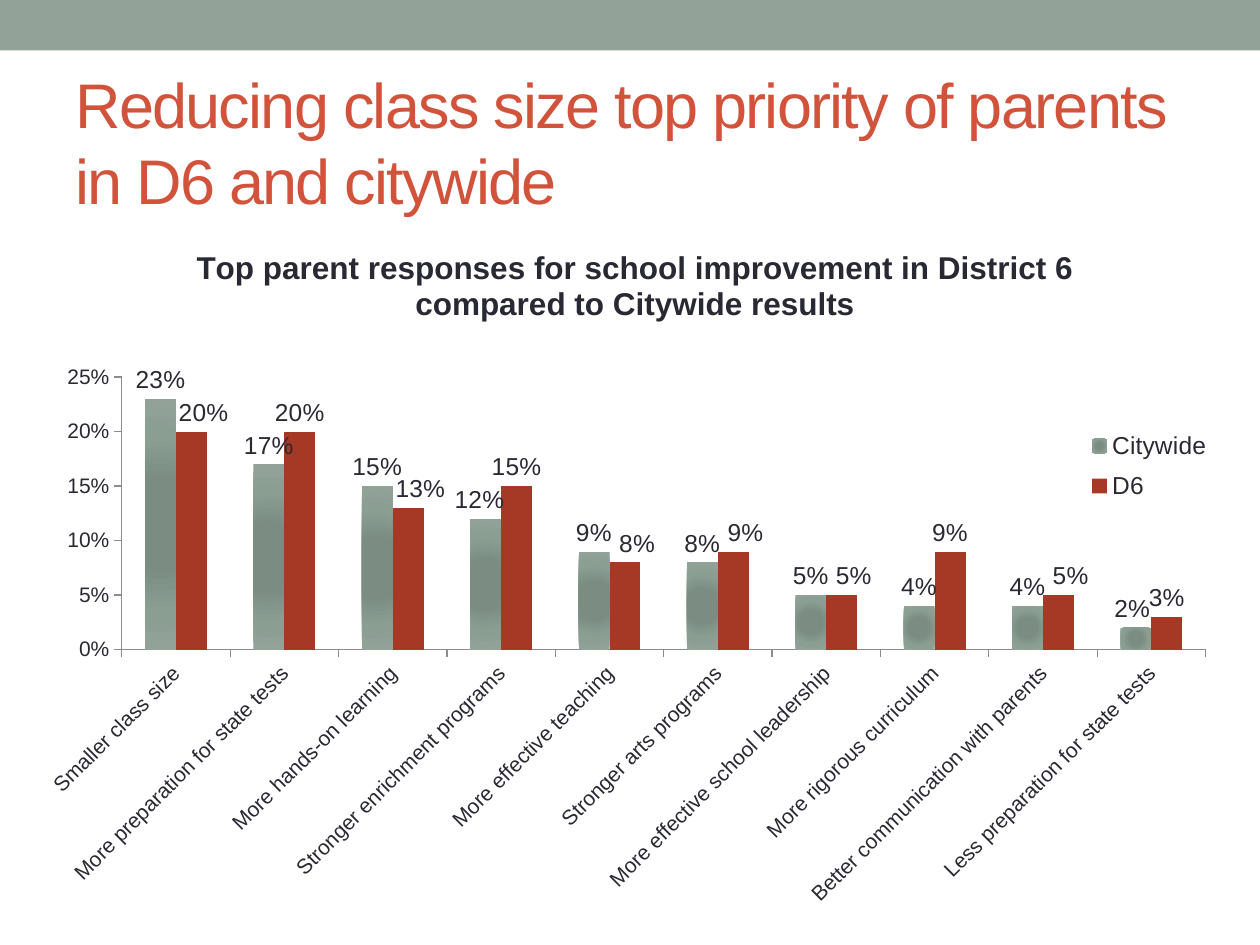
from lxml.etree import SubElement, fromstring
from pptx import Presentation
from pptx.chart.data import CategoryChartData
from pptx.dml.color import RGBColor
from pptx.enum.chart import XL_CHART_TYPE, XL_LABEL_POSITION, XL_LEGEND_POSITION, XL_TICK_MARK
from pptx.enum.shapes import MSO_SHAPE
from pptx.enum.text import MSO_ANCHOR
from pptx.oxml import parse_xml
from pptx.oxml.ns import nsdecls, qn
from pptx.util import Inches, Pt

SAGE = RGBColor(0x93, 0xA2, 0x99)
ORANGE = RGBColor(0xD2, 0x53, 0x3C)
BRICK = RGBColor(0xA5, 0x39, 0x26)
INK = RGBColor(0x29, 0x29, 0x34)
AXIS_GRAY = RGBColor(0x8C, 0x8C, 0x8C)
GRADIENT_STOPS = [
    (0, RGBColor(0x7B, 0x8E, 0x82)),
    (34, RGBColor(0x7B, 0x8D, 0x83)),
    (70, RGBColor(0x8A, 0x9E, 0x92)),
    (100, SAGE),
]
FONT = "Arial"
PERCENT = '0"%"'
WIDTH, HEIGHT = Inches(10), Inches(7.5)

RESPONSES = [
    ("Smaller class size", 23, 20),
    ("More preparation for state tests", 17, 20),
    ("More hands-on learning", 15, 13),
    ("Stronger enrichment programs", 12, 15),
    ("More effective teaching", 9, 8),
    ("Stronger arts programs", 8, 9),
    ("More effective school leadership", 5, 5),
    ("More rigorous curriculum", 4, 9),
    ("Better communication with parents", 4, 5),
    ("Less preparation for state tests", 2, 3),
]
CITYWIDE_LABEL_SHIFTS = {3: -0.005, 9: -0.003}
D6_LABEL_SHIFTS = {0: 0.01, 2: 0.01, 4: 0.01, 5: 0.01, 6: 0.01, 8: 0.01}


def style_font(font, size, color=INK, bold=False):
    font.name = FONT
    font.size = Pt(size)
    font.bold = bold
    font.color.rgb = color


def manual_layout(**settings):
    layout = parse_xml(f"<c:layout {nsdecls('c')}><c:manualLayout/></c:layout>")
    for name, value in settings.items():
        SubElement(layout[0], qn(f"c:{name}")).set("val", str(value))
    return layout


def set_layout(element, layout, following):
    for existing in element.findall(qn("c:layout")):
        element.remove(existing)
    element.find(qn(following)).addprevious(layout)


def add_band(slide, box):
    band = slide.shapes.add_shape(MSO_SHAPE.RECTANGLE, *box)
    band.shadow.inherit = False
    band.fill.solid()
    band.fill.fore_color.rgb = SAGE
    band.line.fill.background()


def add_title(slide, box, text):
    frame = slide.shapes.add_textbox(*box).text_frame
    frame.word_wrap = True
    frame.vertical_anchor = MSO_ANCHOR.MIDDLE
    paragraph = frame.paragraphs[0]
    paragraph.text = text
    style_font(paragraph.font, 36, ORANGE)
    paragraph.runs[0].font._element.set("spc", "-100")


def fill_radial(series):
    series.format.fill.solid()
    stops = "".join(
        f'<a:gs pos="{position * 1000}"><a:srgbClr val="{color}"/></a:gs>'
        for position, color in GRADIENT_STOPS
    )
    gradient = fromstring(
        f'<a:gradFill {nsdecls("a")} rotWithShape="1"><a:gsLst>{stops}</a:gsLst>'
        '<a:path path="circle"><a:fillToRect l="50000" t="50000" r="50000" b="50000"/>'
        "</a:path></a:gradFill>"
    )
    properties = series._element.find(qn("c:spPr"))
    properties.replace(properties.find(qn("a:solidFill")), gradient)


def label_series(series, shifts):
    labels = series.data_labels
    labels.show_value = True
    labels.position = XL_LABEL_POSITION.OUTSIDE_END
    labels.number_format = PERCENT
    labels.number_format_is_linked = False
    style_font(labels.font, 14)
    for index in shifts:
        label = series.points[index].data_label
        style_font(label.font, 14)
        label.position = XL_LABEL_POSITION.OUTSIDE_END
    for element, shift in zip(labels._element.findall(qn("c:dLbl")), shifts.values()):
        element.find(qn("c:idx")).addnext(manual_layout(x=shift, y=0))


def style_axis(axis):
    axis.has_major_gridlines = False
    axis.major_tick_mark = XL_TICK_MARK.OUTSIDE
    axis.minor_tick_mark = XL_TICK_MARK.NONE
    axis.format.line.color.rgb = AXIS_GRAY
    axis.format.line.width = Pt(0.75)
    style_font(axis.tick_labels.font, 12)


def add_response_chart(slide, box, title):
    categories, citywide, district = zip(*RESPONSES)
    data = CategoryChartData(number_format=PERCENT)
    data.categories = categories
    data.add_series("Citywide", citywide)
    data.add_series("D6", district)
    chart = slide.shapes.add_chart(XL_CHART_TYPE.COLUMN_CLUSTERED, *box, data).chart
    style_font(chart.font, 10)

    chart.has_title = True
    chart.chart_title.include_in_layout = False
    paragraph = chart.chart_title.text_frame.paragraphs[0]
    paragraph.text = title
    style_font(paragraph.font, 18, bold=True)

    plot = chart.plots[0]
    plot.gap_width = 150
    plot.overlap = 0
    plot.vary_by_categories = False
    citywide_series, district_series = plot.series
    fill_radial(citywide_series)
    district_series.format.fill.solid()
    district_series.format.fill.fore_color.rgb = BRICK
    label_series(citywide_series, CITYWIDE_LABEL_SHIFTS)
    label_series(district_series, D6_LABEL_SHIFTS)

    for axis in (chart.category_axis, chart.value_axis):
        style_axis(axis)
    chart.category_axis.tick_labels.font._element.getparent().getparent().getparent().find(
        qn("a:bodyPr")
    ).set("rot", "-2700000")
    chart.value_axis.minimum_scale = 0
    chart.value_axis.maximum_scale = 25
    chart.value_axis.major_unit = 5
    chart.value_axis.tick_labels.number_format = PERCENT
    chart.value_axis.tick_labels.number_format_is_linked = False

    chart.has_legend = True
    chart.legend.position = XL_LEGEND_POSITION.RIGHT
    chart.legend.include_in_layout = False
    style_font(chart.legend.font, 14)
    set_layout(
        chart.legend._element,
        manual_layout(xMode="edge", yMode="edge", x=0.86, y=0.28, w=0.12, h=0.13),
        "c:overlay",
    )
    set_layout(
        plot._element.getparent(),
        manual_layout(layoutTarget="inner", xMode="edge", yMode="edge",
                      x=0.081, y=0.22, w=0.885, h=0.383),
        "c:barChart",
    )


def main():
    presentation = Presentation()
    presentation.slide_width, presentation.slide_height = WIDTH, HEIGHT
    slide = presentation.slides.add_slide(presentation.slide_layouts[6])
    add_band(slide, (0, 0, WIDTH, Inches(0.4)))
    add_title(
        slide,
        (Inches(0.5), Inches(0.58), Inches(9), Inches(1.08)),
        "Reducing class size top priority of parents in D6 and citywide",
    )
    add_response_chart(
        slide,
        (Inches(0.18), Inches(1.75), Inches(9.72), Inches(5.65)),
        "Top parent responses for school improvement in District 6 compared to Citywide results",
    )
    presentation.save("out.pptx")


if __name__ == "__main__":
    main()
